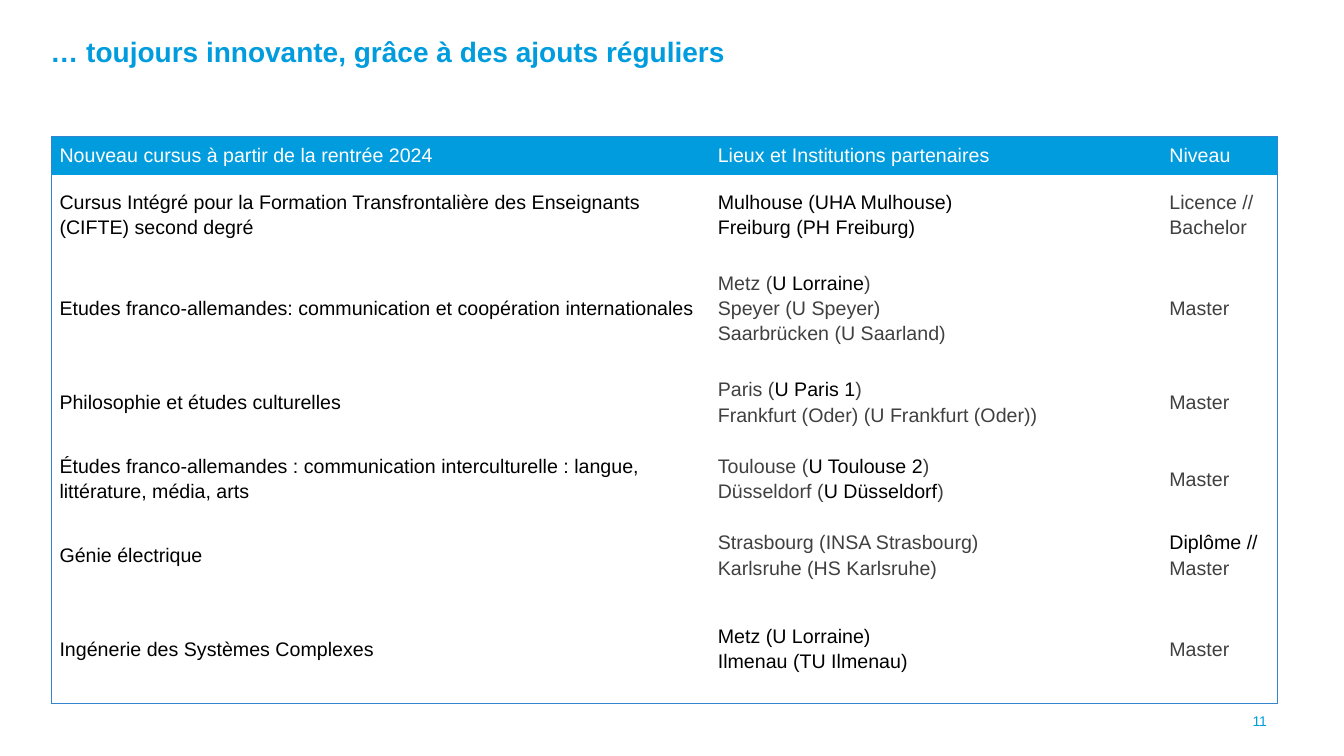
from dataclasses import dataclass

from lxml.etree import SubElement
from pptx import Presentation
from pptx.dml.color import RGBColor
from pptx.enum.text import MSO_ANCHOR, MSO_AUTO_SIZE, PP_ALIGN
from pptx.oxml.ns import qn
from pptx.util import Cm, Pt


@dataclass(frozen=True)
class Theme:
    font: str = "Arial"
    blue: str = "009CDD"
    border: str = "3484CF"
    white: str = "FFFFFF"
    black: str = "000000"
    grey: str = "404040"
    title_size: int = 20
    table_size: int = 14
    number_size: int = 10


theme = Theme()


def style_font(font, size, color, bold=False):
    font.name = theme.font
    font.size = Pt(size)
    font.bold = bold
    font.color.rgb = RGBColor.from_string(color)


def add_border(cell, side):
    line = SubElement(cell._tc.get_or_add_tcPr(), qn(f"a:{side}"), w=str(Pt(0.96)))
    fill = SubElement(line, qn("a:solidFill"))
    SubElement(fill, qn("a:srgbClr"), val=theme.border)


deck = Presentation()
deck.slide_width, deck.slide_height = Cm(33.87), Cm(19.05)
slide = deck.slides.add_slide(deck.slide_layouts[5])

# Title
title = slide.shapes.title
title.left, title.top, title.width, title.height = Cm(1.27), Cm(0.91), Cm(25.32), Cm(0.97)
frame = title.text_frame
frame.text = "… toujours innovante, grâce à des ajouts réguliers"
frame.word_wrap = True
frame.auto_size = MSO_AUTO_SIZE.NONE
frame.vertical_anchor = MSO_ANCHOR.TOP
frame.margin_left = frame.margin_right = 0
para = frame.paragraphs[0]
para.alignment = PP_ALIGN.LEFT
para.line_spacing = 0.8
style_font(para.runs[0].font, theme.title_size, theme.blue, bold=True)

# Programmes: grey text, with black passages between bars
programmes = [
    ("Nouveau cursus à partir de la rentrée 2024", "Lieux et Institutions partenaires", "Niveau"),
    ("|Cursus Intégré pour la Formation Transfrontalière des Enseignants (CIFTE) second degré|",
     "|Mulhouse (UHA Mulhouse)|\n|Freiburg (PH Freiburg)|", "Licence //\nBachelor"),
    ("|Etudes franco-allemandes: communication et coopération internationales|",
     "Metz (|U Lorraine|)\nSpeyer (U Speyer)\nSaarbrücken (U Saarland)", "Master"),
    ("|Philosophie et études culturelles|",
     "Paris (|U Paris 1|)\nFrankfurt (Oder) (U Frankfurt (Oder))", "Master"),
    ("|Études franco-allemandes : communication interculturelle : langue, littérature, média, arts|",
     "Toulouse (|U Toulouse 2|)\nDüsseldorf (|U Düsseldorf|)", "Master"),
    ("|Génie électrique|",
     "Strasbourg (INSA Strasbourg)\nKarlsruhe (HS Karlsruhe)", "|Diplôme //|\nMaster"),
    ("|Ingénerie des Systèmes Complexes|",
     "|Metz (U Lorraine)|\n|Ilmenau (TU Ilmenau)|", "Master"),
]
column_widths = [16.59, 11.38, 2.92]
row_heights = [0.99, 1.93, 2.79, 1.93, 1.93, 1.93, 2.79]

# Table without the default style
table = slide.shapes.add_table(
    len(row_heights), len(column_widths), Cm(1.3), Cm(3.43),
    Cm(sum(column_widths)), Cm(sum(row_heights))).table
table.first_row = True
table.horz_banding = False
table._tbl.tblPr.find(qn("a:tableStyleId")).text = "{2D5ABB26-0587-4C30-8999-92F81FD0307C}"
for column, width in zip(table.columns, column_widths):
    column.width = Cm(width)
for row, height in zip(table.rows, row_heights):
    row.height = Cm(height)

# Cells
last_row, last_column = len(row_heights) - 1, len(column_widths) - 1
for row_index, programme in enumerate(programmes):
    is_header = row_index == 0
    for column_index, text in enumerate(programme):
        cell = table.cell(row_index, column_index)
        cell.vertical_anchor = MSO_ANCHOR.MIDDLE
        cell.margin_left = cell.margin_right = Cm(0.2)
        cell.margin_top = cell.margin_bottom = Cm(0.13)

        # Outer frame only
        for side, on_edge in (("lnL", column_index == 0), ("lnR", column_index == last_column),
                              ("lnT", is_header), ("lnB", row_index == last_row)):
            if on_edge:
                add_border(cell, side)
        if is_header:
            cell.fill.solid()
            cell.fill.fore_color.rgb = RGBColor.from_string(theme.blue)
        else:
            cell.fill.background()

        # Text
        cell.text_frame.text = text.replace("|", "")
        for para, line in zip(cell.text_frame.paragraphs, text.split("\n")):
            para.text = ""
            if not is_header:
                para.line_spacing = Pt(18)
            for part_index, part in enumerate(line.split("|")):
                if part:
                    span = para.add_run()
                    span.text = part
                    body_color = theme.black if part_index % 2 else theme.grey
                    style_font(span.font, theme.table_size,
                               theme.white if is_header else body_color)

# Page number
number_box = slide.shapes.add_textbox(Cm(24.28), Cm(17.65), Cm(7.9), Cm(1.02))
frame = number_box.text_frame
frame.word_wrap = True
frame.vertical_anchor = MSO_ANCHOR.MIDDLE
frame.text = "11"
para = frame.paragraphs[0]
para.alignment = PP_ALIGN.RIGHT
style_font(para.runs[0].font, theme.number_size, theme.blue)

deck.save("out.pptx")
